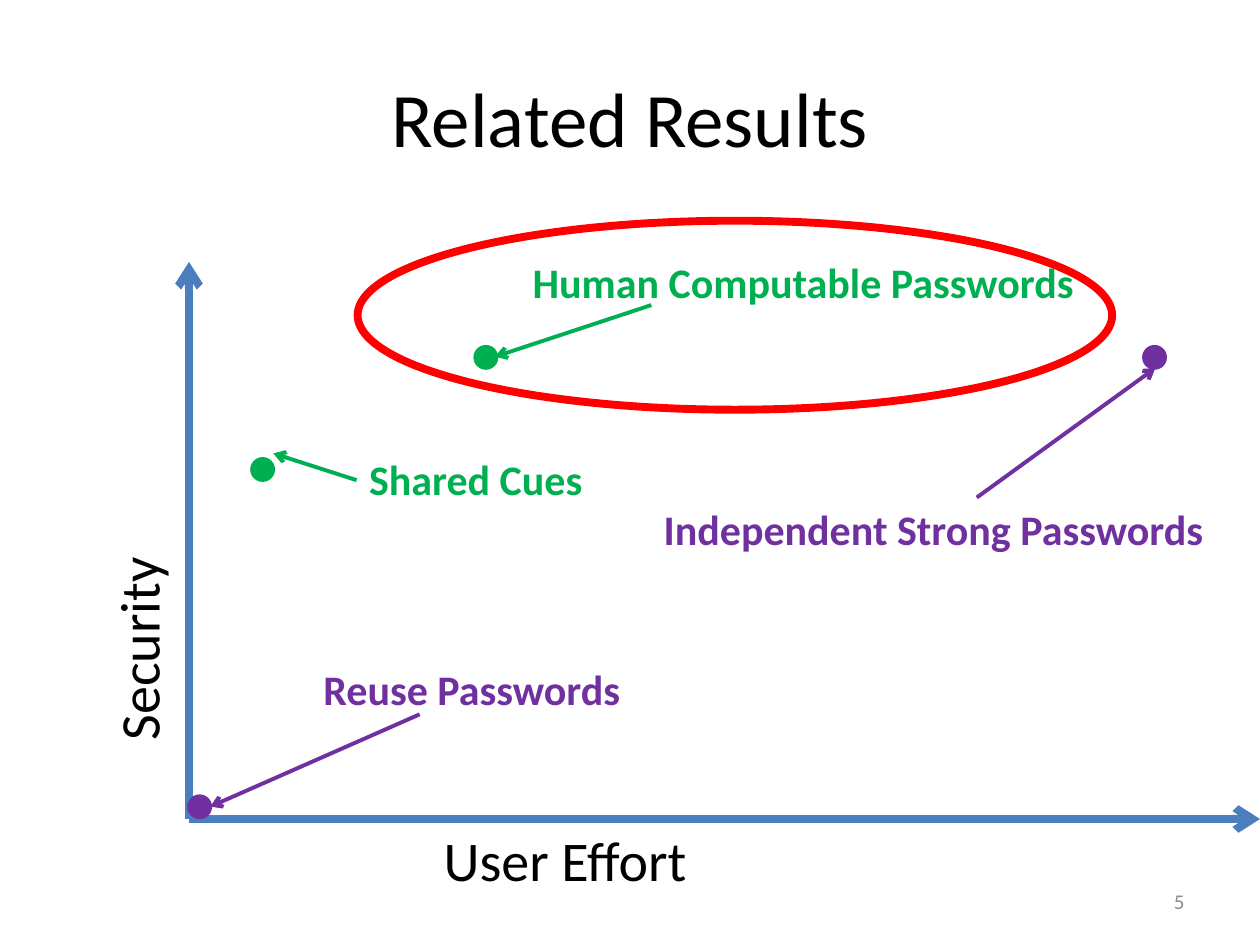
"""Build a slide that plots password schemes by user effort and security."""
import pptx
import pptx.dml.color
import pptx.enum.shapes
import pptx.enum.text
import pptx.oxml
import pptx.oxml.ns
import pptx.util
from dataclasses import dataclass

Cm = pptx.util.Cm
Pt = pptx.util.Pt
ALIGN = pptx.enum.text.PP_ALIGN
ANCHOR = pptx.enum.text.MSO_ANCHOR
FIT = pptx.enum.text.MSO_AUTO_SIZE
SHAPE = pptx.enum.shapes.MSO_SHAPE


@dataclass(frozen=True)
class Theme:
    font: str = "Calibri"
    black: str = "000000"
    gray: str = "8C8C8C"
    blue: str = "4B7EBC"
    green: str = "00B050"
    purple: str = "7030A0"
    red: str = "FF0000"
    title: float = 44
    axis: float = 32
    label: float = 24
    number: float = 12
    thick: float = 4.5
    thin: float = 2.25
    edge: float = 2


THEME = Theme()
WIDTH, HEIGHT = 25.4, 19.05
TITLE = ("Related Results", (1.27, 0.76, 22.86, 3.18))
EFFORT = ("User Effort", (8.69, 16.51, 22.86, 12.57))
SAFETY = ("Security", (-3.18, -2.54, 22.86, 12.57))
NUMBER = ("5", (18.21, 17.65, 5.92, 1.02))
ORIGIN = (3.81, 16.51)
AXES = [(3.81, 5.28), (WIDTH, 16.51)]
DOT = 0.43
RING = (7.21, 4.45, 15.21, 3.81)
SCHEMES = [
    dict(text="Reuse Passwords", color=THEME.purple, dot=(3.81, 16.05),
         label=(6.27, 13.26, 6.55), arrow=((8.46, 14.4), (4.24, 16.26)), wrap=False),
    dict(text="Independent Strong Passwords", color=THEME.purple, dot=(23.06, 6.99),
         label=(13.13, 10.03, 11.51), arrow=((19.69, 10.03), (23.29, 7.42)), wrap=False),
    dict(text="Shared Cues", color=THEME.green, dot=(5.08, 9.25),
         label=(7.19, 9.02, 5.08), arrow=((7.19, 9.68), (5.51, 9.14)), wrap=True),
    dict(text="Human Computable Passwords", color=THEME.green, dot=(9.58, 6.99),
         label=(10.49, 5.05, 11.53), arrow=((13.13, 6.15), (9.98, 7.19)), wrap=False),
]


def paint(color):
    return pptx.dml.color.RGBColor.from_string(color)


def place(shape, box):
    shape.left, shape.top, shape.width, shape.height = map(Cm, box)


def write(shape, text, size, color=THEME.black, bold=False, align=ALIGN.LEFT,
          anchor=ANCHOR.TOP, wrap=True, fit=FIT.NONE, before=0):
    frame = shape.text_frame
    frame.text = text
    frame.word_wrap = wrap
    frame.auto_size = fit
    frame.vertical_anchor = anchor
    line = frame.paragraphs[0]
    line.alignment = align
    line.space_before = Pt(before)
    line.font.name = THEME.font
    line.font.size = Pt(size)
    line.font.bold = bold
    line.font.color.rgb = paint(color)
    return line


def strip_bullet(line):
    props = line._p.get_or_add_pPr()
    props.set("marL", "0")
    props.set("indent", "0")
    props.append(pptx.oxml.parse_xml(
        f'<a:buNone {pptx.oxml.ns.nsdecls("a")}/>'))


def add_text(slide, box, *args, **style):
    shape = slide.shapes.add_textbox(*map(Cm, box))
    write(shape, *args, **style)
    return shape


def add_arrow(slide, start, end, color, weight):
    ends = map(Cm, (*start, *end))
    arrow = slide.shapes.add_connector(
        pptx.enum.shapes.MSO_CONNECTOR.STRAIGHT, *ends)
    arrow.line.color.rgb = paint(color)
    arrow.line.width = Pt(weight)
    space = pptx.oxml.ns.nsdecls("a")
    arrow.line._get_or_add_ln().append(
        pptx.oxml.parse_xml(f'<a:tailEnd {space} type="arrow"/>'))
    arrow._element.spPr.append(pptx.oxml.parse_xml(f"<a:effectLst {space}/>"))


def add_oval(slide, box, color, weight, solid):
    oval = slide.shapes.add_shape(SHAPE.OVAL, *map(Cm, box))
    oval.shadow.inherit = False
    oval.line.color.rgb = paint(color)
    oval.line.width = Pt(weight)
    if solid:
        oval.fill.solid()
        oval.fill.fore_color.rgb = paint(color)
    else:
        oval.fill.background()


def add_scheme(slide, text, color, dot, label, arrow, wrap):
    add_oval(slide, (*dot, DOT, DOT), color, THEME.edge, True)
    add_text(slide, (*label, 1.27), text, THEME.label, color, bold=True,
             wrap=wrap, fit=FIT.SHAPE_TO_FIT_TEXT)
    add_arrow(slide, *arrow, color, THEME.thin)


def main():
    deck = pptx.Presentation()
    deck.slide_width, deck.slide_height = Cm(WIDTH), Cm(HEIGHT)
    slide = deck.slides.add_slide(deck.slide_layouts[1])
    gap = THEME.axis * 0.2

    text, box = TITLE
    place(slide.shapes.title, box)
    write(slide.shapes.title, text, THEME.title, align=ALIGN.CENTER,
          anchor=ANCHOR.MIDDLE)

    text, box = EFFORT
    body = slide.placeholders[1]
    place(body, box)
    strip_bullet(write(body, text, THEME.axis, before=gap))

    for end in AXES:
        add_arrow(slide, ORIGIN, end, THEME.blue, THEME.thick)

    text, box = SAFETY
    add_text(slide, box, text, THEME.axis, before=gap).rotation = 270

    for scheme in SCHEMES:
        add_scheme(slide, **scheme)

    text, box = NUMBER
    add_text(slide, box, text, THEME.number, THEME.gray, align=ALIGN.RIGHT,
             anchor=ANCHOR.MIDDLE)
    add_oval(slide, RING, THEME.red, THEME.thick, False)
    deck.save("out.pptx")


if __name__ == "__main__":
    main()
